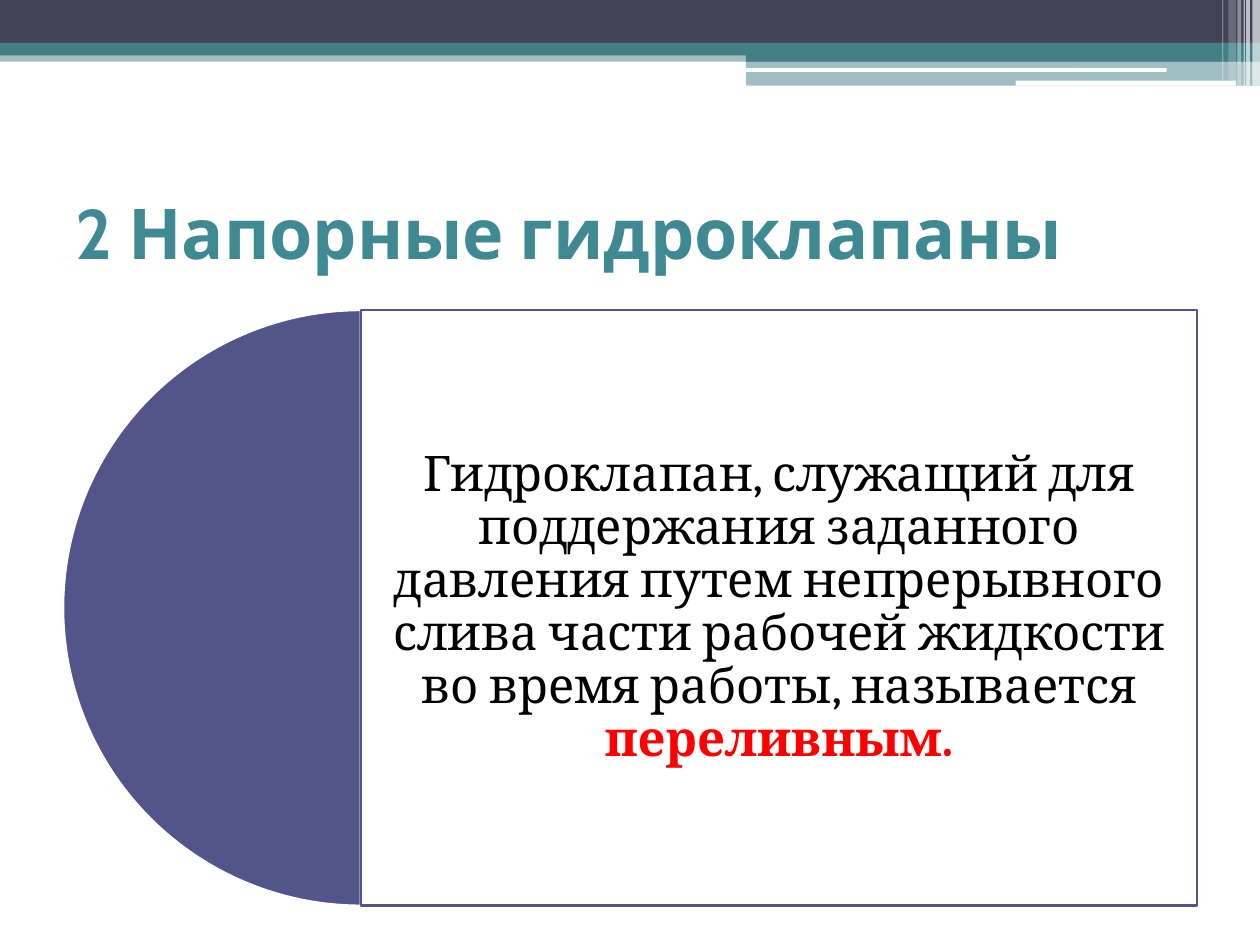
from collections import namedtuple

from lxml.etree import SubElement
from pptx import Presentation
from pptx.dml.color import RGBColor
from pptx.enum.shapes import MSO_SHAPE
from pptx.enum.text import MSO_ANCHOR, MSO_AUTO_SIZE, PP_ALIGN
from pptx.oxml.ns import qn
from pptx.util import Inches, Pt

Box = namedtuple("Box", "left top width height")
INK, TEAL, INDIGO, WHITE = "424456", "438086", "53548A", "FFFFFF"


def colour(text):
    return RGBColor.from_string(text)


def part_of(box, columns, rows, left, top, width, height):
    """Return the cells of a columns-by-rows grid laid over the box."""
    column, row = box.width / columns, box.height / rows
    return Box(int(box.left + left * column), int(box.top + top * row),
               int(width * column), int(height * row))


def add_block(page, kind, box, fill, opacity=100, line=None):
    shape = page.shapes.add_shape(kind, *box)
    shape.shadow.inherit = False
    shape.fill.solid()
    shape.fill.fore_color.rgb = colour(fill)
    if opacity < 100:
        tint = shape.fill._xPr.find(".//" + qn("a:srgbClr"))
        SubElement(tint, qn("a:alpha"), val=str(opacity * 1000))
    if line:
        shape.line.color.rgb = colour(line)
        shape.line.width = Pt(1.5)
    else:
        shape.line.fill.background()
    return shape


def add_header_band(page, box):
    columns, rows = 1000, 68

    # Horizontal bars: left, top, width, height in cells, fill, opacity
    bars = [
        (0, 40, 1000, 9, TEAL, 50),
        (0, 0, 1000, 34, INK, 100),
        (0, 34, 1000, 10, TEAL, 100),
        (592, 39, 408, 10, TEAL, 100),
        (592, 48, 408, 20, TEAL, 50),
    ]
    for *cells, fill, opacity in bars:
        add_block(page, MSO_SHAPE.RECTANGLE,
                  part_of(box, columns, rows, *cells), fill, opacity)

    # Rounded white strips
    for cells in [(591, 54, 335, 3), (806, 64, 175, 4)]:
        add_block(page, MSO_SHAPE.ROUNDED_RECTANGLE,
                  part_of(box, columns, rows, *cells), WHITE)

    # Vertical pinstripes: left, width, height in cells, opacity
    stripes = [(994, 6, 68, 65), (989, 3, 68, 65), (987, 1, 68, 60),
               (982, 3, 68, 40), (975, 6, 64, 20), (970, 1, 64, 30)]
    for left, width, height, opacity in stripes:
        add_block(page, MSO_SHAPE.RECTANGLE,
                  part_of(box, columns, rows, left, 0, width, height),
                  WHITE, opacity)


def add_title(page, box, text):
    title = page.shapes.title
    title.left, title.top, title.width, title.height = box
    frame = title.text_frame
    frame.text = text
    frame.auto_size = MSO_AUTO_SIZE.NONE
    frame.vertical_anchor = MSO_ANCHOR.MIDDLE
    para = frame.paragraphs[0]
    para.alignment = PP_ALIGN.LEFT
    para.font.name = "Cabin"
    para.font.size = Pt(40)
    para.font.bold = True
    para.font.color.rgb = colour("3F8992")


def add_definition(page, box, text, term):
    # Half disc as tall as the box, its flat side on the card's left edge
    radius = box.height // 2
    disc = Box(box.left, box.top, box.height, box.height)
    pie = add_block(page, MSO_SHAPE.PIE, disc, INDIGO, line=WHITE)
    pie.adjustments[0], pie.adjustments[1] = 54, 162

    # Card with the definition
    card_box = Box(box.left + radius, box.top, box.width - radius, box.height)
    card = add_block(page, MSO_SHAPE.RECTANGLE, card_box, WHITE, 90, INDIGO)
    frame = card.text_frame
    frame.word_wrap = True
    frame.vertical_anchor = MSO_ANCHOR.MIDDLE
    frame.margin_left = frame.margin_right = Inches(0.12)
    frame.margin_top = frame.margin_bottom = Inches(0.12)
    para = frame.paragraphs[0]
    para.alignment = PP_ALIGN.CENTER
    para.line_spacing = 0.9
    para.font.name = "Cambria"
    para.font.size = Pt(28)
    for words, ink, bold in [(text, "000000", False), (term, "FF0000", True)]:
        span = para.add_run()
        span.text = words
        span.font.color.rgb = colour(ink)
        span.font.bold = bold


def main():
    deck = Presentation()
    deck.slide_width, deck.slide_height = Inches(10), Inches(7.5)
    page = deck.slides.add_slide(deck.slide_layouts[5])
    whole = Box(0, 0, deck.slide_width, deck.slide_height)

    def area(*cells):
        return part_of(whole, 100, 75, *cells)

    add_header_band(page, area(0, 0, 100, 6.8))
    add_title(page, area(5, 12.5, 90, 11.7), "2 Напорные гидроклапаны")
    add_definition(
        page, area(5, 24.6, 90, 47.3),
        "Гидроклапан, служащий для поддержания заданного давления путем "
        "непрерывного слива части рабочей жидкости во время работы, "
        "называется ",
        "переливным.")
    deck.save("out.pptx")


if __name__ == "__main__":
    main()
